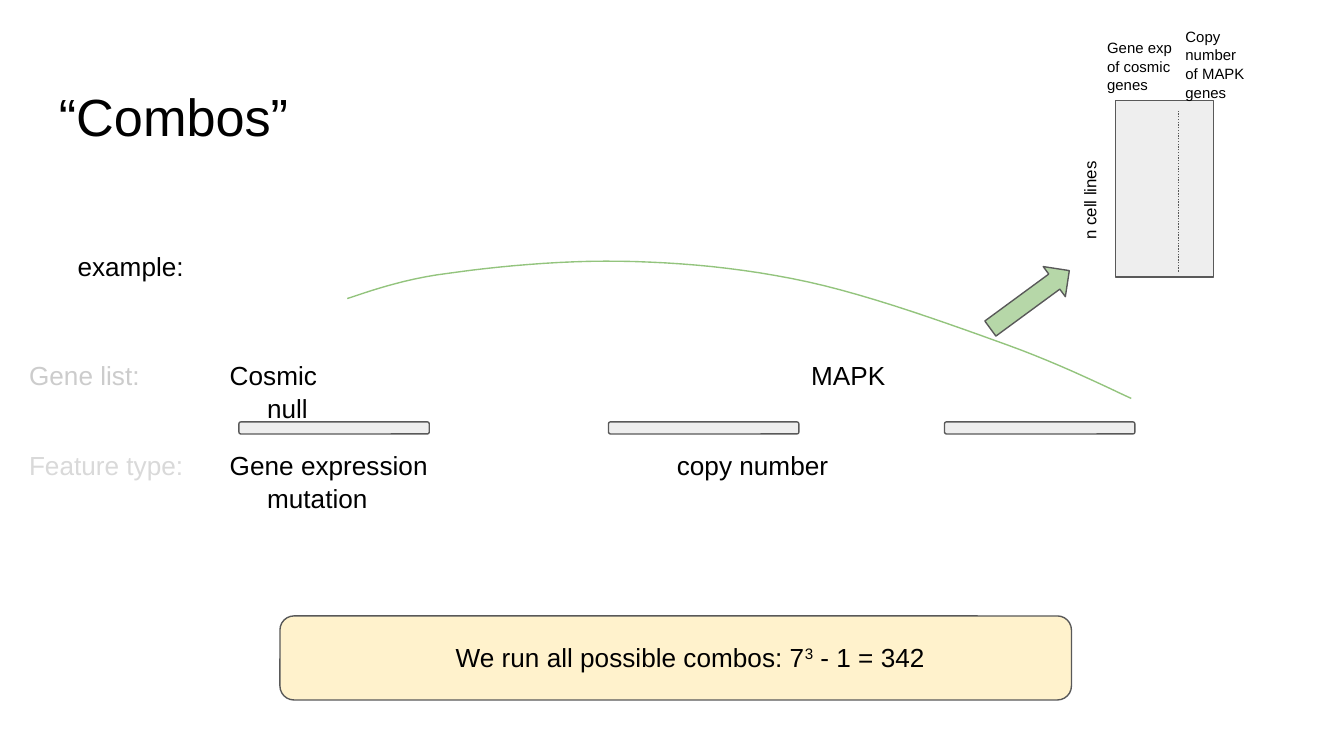
from lxml import etree
from pptx import Presentation
from pptx import util as u
from pptx.dml.color import RGBColor
from pptx.enum import dml, shapes, text
from pptx.oxml.ns import qn

Pt = u.Pt
COLORS = {
    "text": "000000", "gene_label": "CCCCCC", "feature_label": "D9D9D9",
    "panel": "EEEEEE", "outline": "595959", "note": "FFF2CC",
    "arrow": "B6D7A8", "curve": "93C47D",
}


class Deck:
    font, size, line_width, inset = "Arial", 14, 0.75, 7.2

    def __init__(self, prs):
        self.s = prs.slides.add_slide(prs.slide_layouts[6])

    def rgb(self, name):
        return RGBColor.from_string(COLORS[name])

    def outline(self, sp, color="outline"):
        sp.line.color.rgb = self.rgb(color)
        sp.line.width = Pt(self.line_width)

    def run(self, p, words, size, color, raised=False):
        r = p.add_run()
        r.text = words
        r.font.name, r.font.size = self.font, Pt(size)
        r.font.color.rgb = self.rgb(color)
        if raised:
            r.font._element.set("baseline", "30000")

    def paragraph(self, p, tab=None, indent=None):
        p.line_spacing = 1.05
        pPr = p._p.get_or_add_pPr()
        if indent:
            pPr.set("marL", str(Pt(indent)))
            pPr.set("indent", "0")
        if tab:
            tabs = etree.SubElement(pPr, qn("a:tabLst"))
            etree.SubElement(tabs, qn("a:tab"), pos=str(Pt(tab)), algn="l")

    def text(self, box, runs, size=None, color="text", rotation=0, tab=None, second=None):
        sp = self.s.shapes.add_textbox(*map(Pt, box))
        sp.rotation = rotation
        tf = sp.text_frame
        tf.word_wrap = True
        tf.vertical_anchor = text.MSO_ANCHOR.TOP
        tf.margin_left = tf.margin_right = tf.margin_top = tf.margin_bottom = Pt(self.inset)
        p = tf.paragraphs[0]
        self.paragraph(p, tab=tab)
        for words, raised in runs:
            self.run(p, words, size or self.size, color, raised)
        if second:
            p = tf.add_paragraph()
            self.paragraph(p, indent=20)
            self.run(p, second, size or self.size, color)

    def shape(self, kind, box, fill, rotation=0):
        sp = self.s.shapes.add_shape(kind, *map(Pt, box))
        sp.shadow.inherit = False
        sp.rotation = rotation
        sp.fill.solid()
        sp.fill.fore_color.rgb = self.rgb(fill)
        self.outline(sp)

    def dotted_line(self, x1, y1, x2, y2):
        c = self.s.shapes.add_connector(shapes.MSO_CONNECTOR.STRAIGHT, *map(Pt, (x1, y1, x2, y2)))
        self.outline(c)
        c.line.dash_style = dml.MSO_LINE.ROUND_DOT
        etree.SubElement(c._element.spPr, qn("a:effectLst"))

    def curve(self, start, segments, color, steps=12):
        points, a = [], start
        for b, c, d in segments:
            for i in range(1, steps + 1):
                t = i / steps
                w = ((1 - t) ** 3, 3 * t * (1 - t) ** 2, 3 * t * t * (1 - t), t ** 3)
                points.append(tuple(Pt(sum(k * q[n] for k, q in zip(w, (a, b, c, d))))
                                    for n in (0, 1)))
            a = d
        fb = self.s.shapes.build_freeform(*map(Pt, start))
        fb.add_line_segments(points, close=False)
        sp = fb.convert_to_shape()
        sp.shadow.inherit = False
        sp.fill.background()
        self.outline(sp, color)


def main():
    prs = Presentation()
    prs.slide_width, prs.slide_height = Pt(720), Pt(405)
    d = Deck(prs)
    kinds = shapes.MSO_SHAPE

    # Title
    d.text((24.5, 36.5, 185, 45), [("“Combos”", False)], size=28)

    # Feature types, bars and gene lists
    d.text((116, 232.5, 486, 37.5), [("Gene expression\tcopy number", False)],
           tab=239.5, second="mutation")
    for x in (128, 326, 506):
        d.shape(kinds.ROUNDED_RECTANGLE, (x, 226, 102, 6.5), "panel")
    d.text((116, 184.5, 505.5, 37.5), [("Cosmic\tMAPK", False)], tab=311.5, second="null")

    # Row labels
    d.text((34.5, 126, 83, 37.5), [("example:", False)])
    d.text((8.5, 232.5, 105, 37.5), [("Feature type:", False)], color="feature_label")
    d.text((8.5, 184.5, 105, 37.5), [("Gene list:", False)], color="gene_label")

    # Number of combos
    d.shape(kinds.ROUNDED_RECTANGLE, (150, 330, 424, 45), "note")
    d.text((237, 335.5, 289.5, 37.5),
           [("We run all possible combos: 7", False), ("3", True), (" - 1 = 342", False)])

    # Example matrix
    d.shape(kinds.RECTANGLE, (597.5, 54, 52.5, 94.5), "panel")
    d.text((551.5, 93.5, 62.5, 21.5), [("n cell lines", False)], size=9, rotation=270)
    d.text((586, 13, 52.5, 37.5), [("Gene exp of cosmic genes", False)], size=8)
    d.text((628, 7, 49.5, 49.5), [("Copy number of MAPK genes", False)], size=8)
    d.dotted_line(631.5, 145.5, 631.5, 59)

    # Arrow and curve linking the example choices
    d.shape(kinds.RIGHT_ARROW, (525.5, 150.5, 52.5, 20), "arrow", rotation=323.7)
    d.curve((186, 160), [
        ((194, 157.5), (215, 149.5), (240, 146.5)),
        ((264, 143), (300, 139.5), (332, 140)),
        ((364, 140.5), (398, 143.5), (432.5, 151)),
        ((467, 158.5), (511, 174.5), (540, 185)),
        ((569, 195.5), (595, 208.5), (606, 213.5)),
    ], "curve")

    prs.save("out.pptx")


if __name__ == "__main__":
    main()
